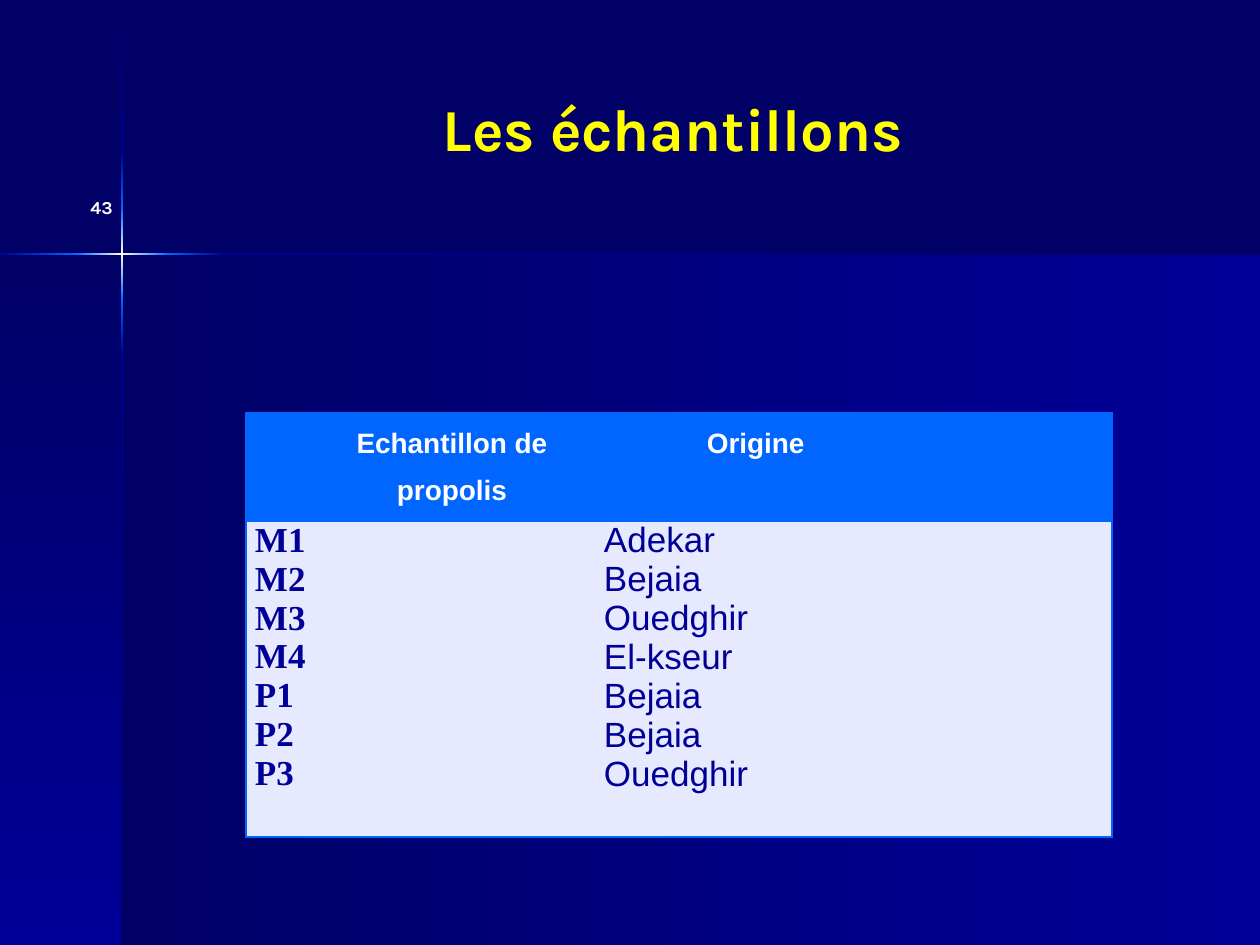
from lxml.etree import SubElement
from pptx import Presentation
from pptx.dml.color import RGBColor
from pptx.enum.shapes import MSO_SHAPE as SHAPE
from pptx.enum.text import MSO_ANCHOR as ANCHOR, PP_ALIGN as ALIGN
from pptx.oxml.ns import qn
from pptx.util import Pt

PX = 914400 / 126
DARK = RGBColor(0x00, 0x00, 0x66)
NAVY = RGBColor(0x00, 0x00, 0x99)
BRIGHT = RGBColor(0x00, 0x66, 0xFF)
WHITE = RGBColor(0xFF, 0xFF, 0xFF)
YELLOW = RGBColor(0xFF, 0xFF, 0x00)
PALE = RGBColor(0xE7, 0xEA, 0xFF)


def px(value):
    return round(value * PX)


def write(frame, lines, font, size, color, bold=True, align=ALIGN.LEFT,
          indent=0, spacing=None, raised=0):
    frame.word_wrap = True
    for number, line in enumerate(lines):
        paragraph = frame.add_paragraph() if number else frame.paragraphs[0]
        paragraph.alignment = align
        paragraph.line_spacing = spacing
        if indent:
            paragraph._p.get_or_add_pPr().set("marL", str(px(indent)))
        run = paragraph.add_run()
        run.text = line
        run.font.name = font
        run.font.size = Pt(size)
        run.font.bold = bold
        run.font.color.rgb = color
        if raised:
            run.font._element.set("baseline", str(raised * 1000))


deck = Presentation()
deck.slide_width, deck.slide_height = px(1260), px(945)
slide = deck.slides.add_slide(deck.slide_layouts[6])
slide.background.fill.solid()
slide.background.fill.fore_color.rgb = DARK

bands = [
    (122, 255, 1138, 690, 0, (DARK, NAVY)),
    (0, 255, 122, 690, 270, (DARK, NAVY)),
]
ramps = [(DARK, NAVY), (NAVY, BRIGHT), (BRIGHT, WHITE, BRIGHT),
         (BRIGHT, NAVY), (NAVY, DARK)]
rows = [1, 152, 208, 300, 355, 945]
columns = [0, 76, 168, 223, 1260]
for top, bottom, ramp in zip(rows, rows[1:], ramps):
    bands.append((121, top, 2, bottom - top, 270, ramp))
for left, right, ramp in zip(columns, columns[1:], ramps[1:]):
    bands.append((left, 253, right - left, 2, 0, ramp))

for left, top, width, height, angle, ramp in bands:
    band = slide.shapes.add_shape(SHAPE.RECTANGLE, px(left), px(top), px(width), px(height))
    band.shadow.inherit = False
    band.line.fill.background()
    band.fill.gradient()
    band.fill.gradient_angle = angle
    stops = band._element.spPr.find(".//" + qn("a:gsLst"))
    stops.clear()
    for step, color in enumerate(ramp):
        stop = SubElement(stops, qn("a:gs"), pos=str(step * 100000 // (len(ramp) - 1)))
        SubElement(stop, qn("a:srgbClr"), val=str(color))

title = slide.shapes.add_textbox(px(106), px(49), px(1134), px(158)).text_frame
title.vertical_anchor = ANCHOR.MIDDLE
write(title, ["Les échantillons"], "Karla", 34, YELLOW, align=ALIGN.CENTER)

samples = slide.shapes.add_table(2, 2, px(246), px(413), px(866), px(424)).table
for column, width in zip(samples.columns, (349, 517)):
    column.width = px(width)
for row, height in zip(samples.rows, (108, 316)):
    row.height = px(height)

origins = [("M1", "Adekar"), ("M2", "Bejaia"), ("M3", "Ouedghir"), ("M4", "El-kseur"),
           ("P1", "Bejaia"), ("P2", "Bejaia"), ("P3", "Ouedghir")]
codes, places = zip(*origins)
heading = dict(font="Arial", size=16, color=WHITE, spacing=1.5)
cells = [
    (0, 0, BRIGHT, ["Echantillon de propolis"], dict(heading, align=ALIGN.CENTER, indent=63)),
    (0, 1, BRIGHT, ["Origine"], dict(heading, indent=103)),
    (1, 0, PALE, codes, dict(font="Times New Roman", size=20, color=NAVY)),
    (1, 1, PALE, places, dict(font="Arial", size=20, color=NAVY, bold=False)),
]
for row, column, fill, lines, style in cells:
    cell = samples.cell(row, column)
    cell.margin_left = cell.margin_right = px(9)
    cell.margin_top = cell.margin_bottom = 0
    inner = "R" if column == 0 else "L"
    for side in "LRTB":
        border = SubElement(cell._tc.get_or_add_tcPr(), qn("a:ln" + side), w=str(Pt(1)))
        if side == inner:
            SubElement(border, qn("a:noFill"))
        else:
            SubElement(SubElement(border, qn("a:solidFill")), qn("a:srgbClr"), val=str(BRIGHT))
    cell.fill.solid()
    cell.fill.fore_color.rgb = fill
    write(cell.text_frame, lines, **style)

page_number = slide.shapes.add_textbox(px(-137), px(186), px(262), px(63)).text_frame
write(page_number, ["43"], "Karla", 18, WHITE, align=ALIGN.RIGHT, raised=30)

deck.save("out.pptx")
